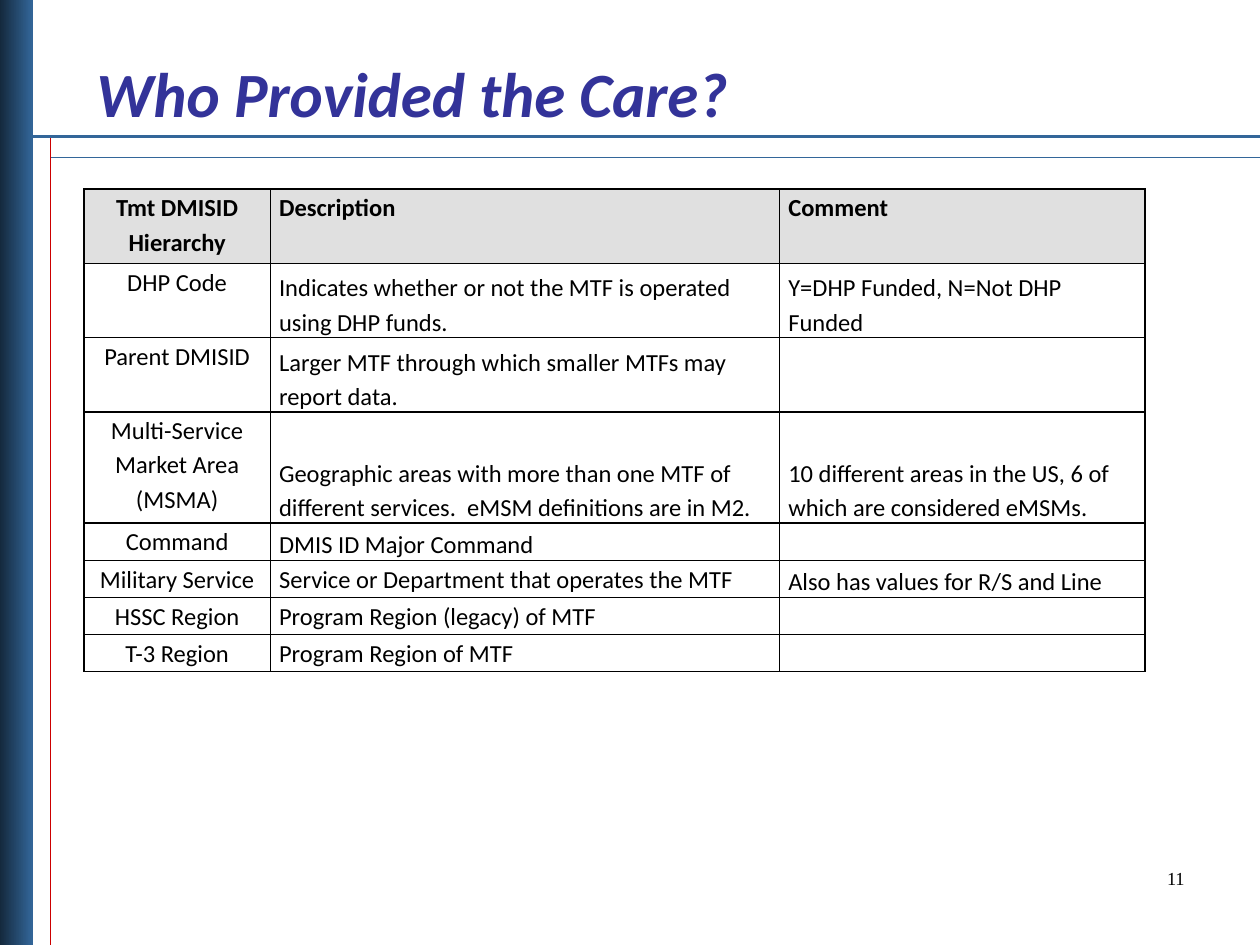
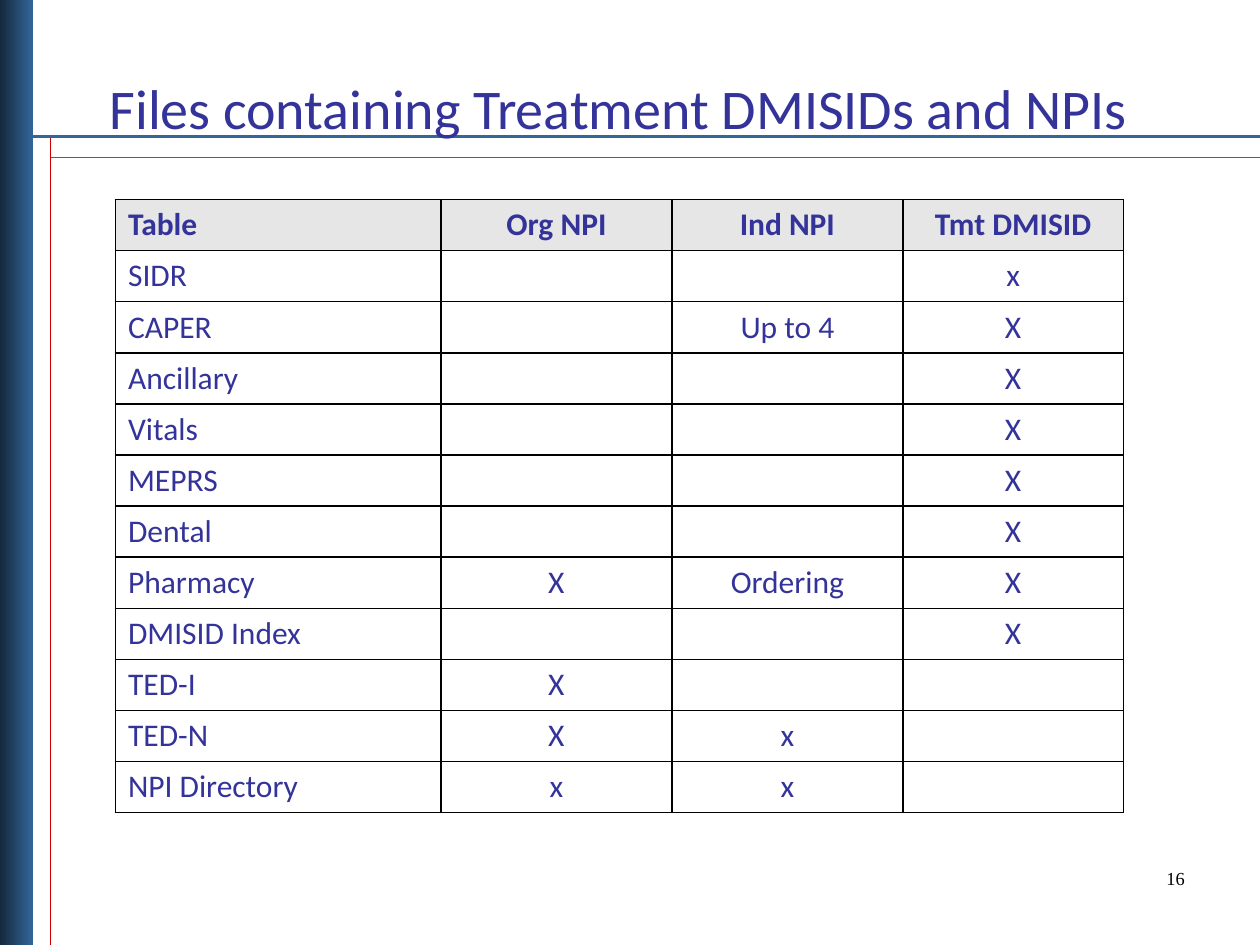
from lxml import etree
from pptx import Presentation
from pptx.dml.color import RGBColor
from pptx.enum.shapes import MSO_CONNECTOR, MSO_SHAPE
from pptx.enum.text import MSO_ANCHOR, PP_ALIGN
from pptx.oxml.ns import qn
from pptx.util import Pt

LINE, RECT = MSO_CONNECTOR.STRAIGHT, MSO_SHAPE.RECTANGLE
TOP, LOW = MSO_ANCHOR.TOP, MSO_ANCHOR.BOTTOM
LEFT, MID, RIGHT = PP_ALIGN.LEFT, PP_ALIGN.CENTER, PP_ALIGN.RIGHT

NAVY = RGBColor(0x14, 0x29, 0x3D)
BLUE = RGBColor(0x33, 0x66, 0x99)
RED = RGBColor(0xCC, 0, 0)
INK = RGBColor(0x33, 0x33, 0x99)
BLACK = RGBColor(0, 0, 0)
WHITE = RGBColor(0xFF, 0xFF, 0xFF)
GRAY = RGBColor(0xE0, 0xE0, 0xE0)
PALE = RGBColor(0xE6, 0xE6, 0xE6)
SANS, SERIF = "Calibri", "Times New Roman"

WIDE, HIGH = 720, 540
RULE, SIDE = 78, 28.8  # y of the title rule, x of the red rule

CARE = [
    ("Tmt DMISID Hierarchy", "Description", "Comment"),
    ("DHP Code", "Indicates whether or not the MTF is operated using DHP funds.",
     "Y=DHP Funded, N=Not DHP Funded"),
    ("Parent DMISID", "Larger MTF through which smaller MTFs may report data.", ""),
    ("Multi-Service Market Area (MSMA)",
     "Geographic areas with more than one MTF of different services.  "
     "eMSM definitions are in M2.",
     "10 different areas in the US, 6 of which are considered eMSMs."),
    ("Command", "DMIS ID Major Command", ""),
    ("Military Service", "Service or Department that operates the MTF",
     "Also has values for R/S and Line"),
    ("HSSC Region", "Program Region (legacy) of MTF", ""),
    ("T-3 Region", "Program Region of MTF", ""),
]
FILES = [
    ("Table", "Org NPI", "Ind NPI", "Tmt DMISID"),
    ("SIDR", "", "", "x"),
    ("CAPER", "", "Up to 4", "X"),
    ("Ancillary", "", "", "X"),
    ("Vitals", "", "", "X"),
    ("MEPRS", "", "", "X"),
    ("Dental", "", "", "X"),
    ("Pharmacy", "X", "Ordering", "X"),
    ("DMISID Index", "", "", "X"),
    ("TED-I", "X", "", ""),
    ("TED-N", "X", "x", ""),
    ("NPI Directory", "x", "x", ""),
]


def style(para, size, color, font=SANS, bold=False, slant=False, align=LEFT):
    para.alignment = align
    for run in para.runs:
        face = run.font
        face.name, face.size = font, Pt(size)
        face.bold, face.italic = bold, slant
        face.color.rgb = color


def label(slide, box, text, size, color, anchor=TOP, **look):
    frame = slide.shapes.add_textbox(*map(Pt, box)).text_frame
    frame.word_wrap = True
    frame.vertical_anchor = anchor
    frame.text = text
    style(frame.paragraphs[0], size, color, **look)


def rule(slide, ends, color, width):
    line = slide.shapes.add_connector(LINE, *map(Pt, ends))
    line.line.color.rgb = color
    line.line.width = Pt(width)
    etree.SubElement(line._element.spPr, qn("a:effectLst"))


def frame_page(slide, number):
    # Rules beside and below the title
    rule(slide, (SIDE, RULE + 12, WIDE, RULE + 12), BLUE, 1)
    rule(slide, (SIDE, RULE, SIDE, HIGH), RED, 0.75)
    rule(slide, (0, RULE, WIDE, RULE), BLUE, 1.5)
    # Shaded band on the left edge
    band = slide.shapes.add_shape(RECT, 0, 0, Pt(18.75), Pt(HIGH))
    band.shadow.inherit = False
    band.line.fill.background()
    band.fill.gradient()
    band.fill.gradient_angle = 0
    for stop, color in zip(band.fill.gradient_stops, (NAVY, BLUE)):
        stop.color.rgb = color
    # Page number
    label(slide, (516, 492, 168, 37.5), number, 10.5, BLACK, font=SERIF, align=RIGHT)


def edge(cell):
    props = cell._tc.get_or_add_tcPr()
    for side in ("lnL", "lnR", "lnT", "lnB"):
        line = etree.SubElement(props, qn("a:" + side), w=str(Pt(1)))
        fill = etree.SubElement(line, qn("a:solidFill"))
        etree.SubElement(fill, qn("a:srgbClr"), val=str(BLACK))


def grid(slide, spot, rows, cols, highs, size, color, head, body, mids):
    """Bordered table; mids holds the centred columns."""
    box = (*spot, sum(cols), sum(highs))
    table = slide.shapes.add_table(len(rows), len(cols), *map(Pt, box)).table
    table.first_row = table.horz_banding = False
    for col, width in zip(table.columns, cols):
        col.width = Pt(width)
    for row, high in zip(table.rows, highs):
        row.height = Pt(high)
    for r, texts in enumerate(rows):
        for c, text in enumerate(texts):
            cell = table.cell(r, c)
            edge(cell)
            fill = body if r else head
            if fill is None:
                cell.fill.background()
            else:
                cell.fill.solid()
                cell.fill.fore_color.rgb = fill
            cell.text_frame.text = text
            para = cell.text_frame.paragraphs[0]
            style(para, size, color, bold=r == 0, align=MID if c in mids else LEFT)
            if not text:  # keeps empty rows from growing
                etree.SubElement(para._p, qn("a:endParaRPr"), sz=str(size * 100))
    return table


def care_page(slide):
    frame_page(slide, "11")
    label(slide, (48, 30, 612, 48), "Who Provided the Care?", 36, INK, LOW,
          bold=True, slant=True)
    highs = [21.22 * lines for lines in (2, 2, 2, 3, 1, 1, 1, 1)]
    table = grid(slide, (48, 108), CARE, (106.5, 291, 208.75), highs,
                 14, BLACK, GRAY, None, {0})
    # Tight cells, with most details set low
    for r in range(len(CARE)):
        for c in range(3):
            cell = table.cell(r, c)
            cell.margin_left = cell.margin_right = Pt(5)
            cell.margin_top = cell.margin_bottom = 0
            cell.text_frame.paragraphs[0].line_spacing = 1.15
            if r and (c == 2 or c == 1 and r < 5):
                cell.vertical_anchor = LOW


def files_page(slide):
    frame_page(slide, "16")
    label(slide, (55.5, -24, 612, 108),
          "Files containing Treatment DMISIDs and NPIs", 32, INK, LOW)
    grid(slide, (66, 114), FILES, (186, 132, 132, 126), [29.2] * len(FILES),
         18, INK, PALE, WHITE, {1, 2, 3})


def main():
    deck = Presentation()
    deck.slide_width, deck.slide_height = Pt(WIDE), Pt(HIGH)
    for build in (care_page, files_page):
        build(deck.slides.add_slide(deck.slide_layouts[6]))
    deck.save("out.pptx")


if __name__ == "__main__":
    main()
